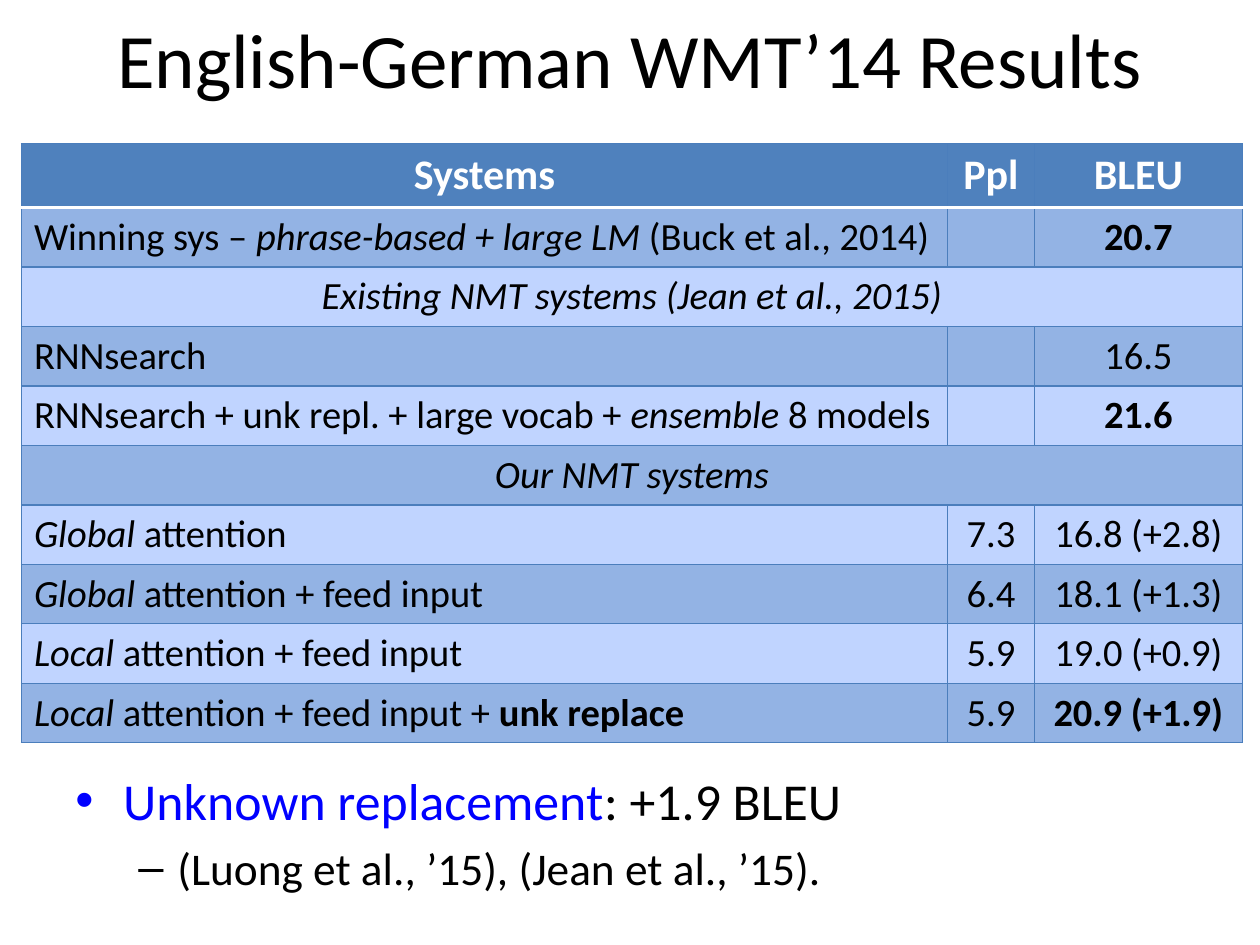
from dataclasses import dataclass

import lxml.etree
import pptx
import pptx.dml.color
import pptx.enum.text
import pptx.oxml.ns
import pptx.util

Inches = pptx.util.Inches
Pt = pptx.util.Pt
RGBColor = pptx.dml.color.RGBColor
Align = pptx.enum.text.PP_ALIGN
Anchor = pptx.enum.text.MSO_ANCHOR
qn = pptx.oxml.ns.qn


@dataclass(frozen=True)
class Theme:
    font: str = "Calibri"
    black: str = "000000"
    white: str = "FFFFFF"
    highlight: str = "0000FF"
    header: str = "4F81BD"
    dark_band: str = "93B3E4"
    light_band: str = "C0D4FF"
    border: str = "4B7EBC"
    border_width: float = 0.75
    header_rule_width: float = 2
    title_size: float = 44
    header_size: float = 24
    cell_size: float = 22
    bullet_size: float = 29.6
    sub_bullet_size: float = 25.9


@dataclass(frozen=True)
class Span:
    text: str
    bold: bool = False
    italic: bool = False
    color: str = Theme.black


@dataclass(frozen=True)
class Result:
    system: tuple[Span, ...]
    perplexity: str
    bleu: str
    best: bool = False


@dataclass(frozen=True)
class Section:
    name: str


@dataclass(frozen=True)
class Bullet:
    spans: tuple[Span, ...]
    level: int
    symbol: str
    size: float
    margin: float
    hanging: float


THEME = Theme()
HEADINGS = ("Systems", "Ppl", "BLEU")
COLUMN_WIDTHS = (7.35, 0.69, 1.65)
HEADER_HEIGHT, ROW_HEIGHT = 0.5, 0.41
GLOBAL = Span("Global ", italic=True)
LOCAL = Span("Local ", italic=True)

ROWS = (
    Result((Span("Winning sys – "), Span("phrase-based + large LM ", italic=True),
            Span("(Buck et al., 2014)")), "", "20.7", best=True),
    Section("Existing NMT systems (Jean et al., 2015)"),
    Result((Span("RNNsearch"),), "", "16.5"),
    Result((Span("RNNsearch + unk repl. + large vocab + "), Span("ensemble", italic=True),
            Span(" 8 models")), "", "21.6", best=True),
    Section("Our NMT systems"),
    Result((GLOBAL, Span("attention")), "7.3", "16.8 (+2.8)"),
    Result((GLOBAL, Span("attention + feed input")), "6.4", "18.1 (+1.3)"),
    Result((LOCAL, Span("attention + feed input")), "5.9", "19.0 (+0.9)"),
    Result((LOCAL, Span("attention + feed input + "), Span("unk replace", bold=True)),
           "5.9", "20.9 (+1.9)", best=True),
)

BULLETS = (
    Bullet((Span("Unknown replacement", color=THEME.highlight), Span(": +1.9 BLEU")),
           0, "•", THEME.bullet_size, 0.38, 0.38),
    Bullet((Span("(Luong et al., ’15), (Jean et al., ’15)."),),
           1, "–", THEME.sub_bullet_size, 0.81, 0.31),
)


def add_spans(paragraph, spans: tuple[Span, ...], size: float) -> None:
    for span in spans:
        run = paragraph.add_run()
        run.text = span.text
        run.font.name = THEME.font
        run.font.size = Pt(size)
        run.font.bold = span.bold
        run.font.italic = span.italic
        run.font.color.rgb = RGBColor.from_string(span.color)


def add_title(slide, text: str) -> None:
    title = slide.shapes.title
    title.left, title.top = Inches(0.5), Inches(-0.17)
    title.width, title.height = Inches(9), Inches(1.25)
    title.text_frame.vertical_anchor = Anchor.MIDDLE
    paragraph = title.text_frame.paragraphs[0]
    paragraph.alignment = Align.CENTER
    add_spans(paragraph, (Span(text),), THEME.title_size)


def set_border(cell, side: str, color: str, width: float) -> None:
    """Add one cell border; side is L, R, T or B, called in that order before the fill."""
    properties = cell._tc.get_or_add_tcPr()
    line = lxml.etree.SubElement(properties, qn(f"a:ln{side}"), w=str(Pt(width)))
    fill = lxml.etree.SubElement(line, qn("a:solidFill"))
    lxml.etree.SubElement(fill, qn("a:srgbClr"), val=color)


def style_cell(cell, row: int) -> None:
    header_rule_side = {0: "B", 1: "T"}.get(row)
    for side in "LRTB":
        if side == header_rule_side:
            set_border(cell, side, THEME.white, THEME.header_rule_width)
        else:
            set_border(cell, side, THEME.border, THEME.border_width)
    band = THEME.dark_band if row % 2 else THEME.light_band
    cell.fill.solid()
    cell.fill.fore_color.rgb = RGBColor.from_string(band if row else THEME.header)


def fill_cell(cell, spans: tuple[Span, ...], size: float, alignment=Align.CENTER) -> None:
    paragraph = cell.text_frame.paragraphs[0]
    paragraph.alignment = alignment
    add_spans(paragraph, spans, size)


def add_results_table(slide) -> None:
    frame = slide.shapes.add_table(len(ROWS) + 1, len(HEADINGS), Inches(0.17), Inches(1.14),
                                   Inches(sum(COLUMN_WIDTHS)), Inches(4.7))
    table = frame.table
    for column, width in zip(table.columns, COLUMN_WIDTHS):
        column.width = Inches(width)
    for index, row in enumerate(table.rows):
        row.height = Inches(ROW_HEIGHT if index else HEADER_HEIGHT)
        for cell in row.cells:
            style_cell(cell, index)
    frame.height = Inches(4.7)

    for cell, heading in zip(table.rows[0].cells, HEADINGS):
        cell.vertical_anchor = Anchor.MIDDLE
        fill_cell(cell, (Span(heading, bold=True, color=THEME.white),), THEME.header_size)
    for index, entry in enumerate(ROWS, start=1):
        system, perplexity, bleu = (table.cell(index, column) for column in range(3))
        if isinstance(entry, Section):
            system.merge(bleu)
            fill_cell(system, (Span(entry.name, italic=True),), THEME.cell_size)
            continue
        fill_cell(system, entry.system, THEME.cell_size, Align.LEFT)
        if entry.perplexity:
            fill_cell(perplexity, (Span(entry.perplexity),), THEME.cell_size)
        fill_cell(bleu, (Span(entry.bleu, bold=entry.best),), THEME.cell_size)


def add_bullets(slide) -> None:
    box = slide.shapes.add_textbox(Inches(0.5), Inches(6.05), Inches(9), Inches(1.08))
    text_frame = box.text_frame
    text_frame.word_wrap = True
    for index, bullet in enumerate(BULLETS):
        paragraph = text_frame.add_paragraph() if index else text_frame.paragraphs[0]
        paragraph.level = bullet.level
        paragraph.space_before = Pt(round(bullet.size * 0.2, 1))
        properties = paragraph._p.get_or_add_pPr()
        properties.set("marL", str(Inches(bullet.margin)))
        properties.set("indent", str(-Inches(bullet.hanging)))
        lxml.etree.SubElement(properties, qn("a:buFont"), typeface="Arial")
        lxml.etree.SubElement(properties, qn("a:buChar"), char=bullet.symbol)
        add_spans(paragraph, bullet.spans, bullet.size)


def main() -> None:
    presentation = pptx.Presentation()
    presentation.slide_width, presentation.slide_height = Inches(10), Inches(7.5)
    slide = presentation.slides.add_slide(presentation.slide_layouts[5])
    add_title(slide, "English-German WMT’14 Results")
    add_results_table(slide)
    add_bullets(slide)
    presentation.save("out.pptx")


if __name__ == "__main__":
    main()
